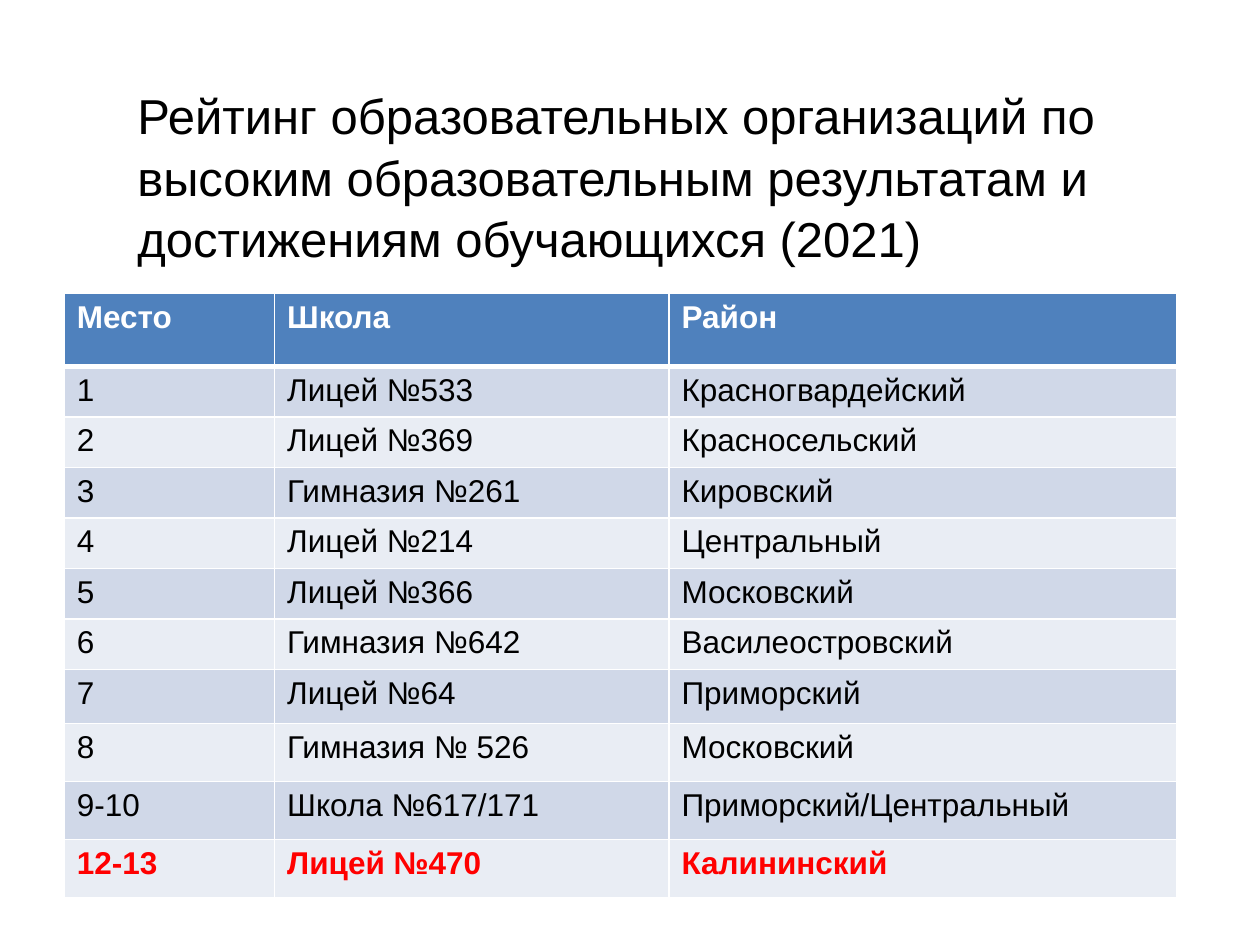
from lxml import etree
from pptx import Presentation
from pptx.dml.color import RGBColor
from pptx.enum.text import MSO_ANCHOR
from pptx.oxml.ns import qn
from pptx.util import Inches, Pt

MIDDLE = MSO_ANCHOR.MIDDLE
FONT = "Arial"
BLACK, WHITE, RED = "000000", "FFFFFF", "FF0000"
HEADER_FILL = "4F81BD"
BAND_FILLS = ("E9EDF4", "D0D8E8")

TITLE = ("Рейтинг образовательных организаций по высоким образовательным "
         "результатам и достижениям обучающихся (2021)")
COLUMN_WIDTHS = (1.67, 3.13, 4.03)
ROW_HEIGHTS = (0.58, 0.39, 0.4, 0.39, 0.39, 0.39, 0.39, 0.43, 0.46, 0.46, 0.46)
RATING = (
    ("Место", "Школа", "Район"),
    ("1", "Лицей №533", "Красногвардейский"),
    ("2", "Лицей №369", "Красносельский"),
    ("3", "Гимназия №261", "Кировский"),
    ("4", "Лицей №214", "Центральный"),
    ("5", "Лицей №366", "Московский"),
    ("6", "Гимназия №642", "Василеостровский"),
    ("7", "Лицей №64", "Приморский"),
    ("8", "Гимназия № 526", "Московский"),
    ("9-10", "Школа №617/171", "Приморский/Центральный"),
    ("12-13", "Лицей №470", "Калининский"),
)


def color(value):
    return RGBColor.from_string(value)


def set_font(paragraph, size, font_color, bold=False):
    font = paragraph.font
    font.name = FONT
    font.size = Pt(size)
    font.bold = bold
    font.color.rgb = color(font_color)


def add_title(slide):
    box = slide.shapes.add_textbox(Inches(1.09), Inches(0.68), Inches(7.82), Inches(1.42))
    frame = box.text_frame
    frame.word_wrap = True
    frame.vertical_anchor = MIDDLE
    frame.margin_left = frame.margin_right = frame.margin_top = frame.margin_bottom = 0
    paragraph = frame.paragraphs[0]
    paragraph.text = TITLE
    paragraph.line_spacing = 1.05
    set_font(paragraph, 28, BLACK)


def set_borders(cell, widths):
    """Draw white borders; widths maps a side tag to points."""
    properties = cell._tc.get_or_add_tcPr()
    for index, (side, width) in enumerate(widths.items()):
        line = etree.Element(qn(f"a:{side}"), w=str(Pt(width)))
        fill = etree.SubElement(line, qn("a:solidFill"))
        etree.SubElement(fill, qn("a:srgbClr"), val=WHITE)
        properties.insert(index, line)


def row_style(row):
    """Return fill, font colour and weight of a row."""
    if row == 0:
        return HEADER_FILL, WHITE, True
    if row == len(RATING) - 1:
        return BAND_FILLS[row % 2], RED, True
    return BAND_FILLS[row % 2], BLACK, False


def add_rating_table(slide):
    table = slide.shapes.add_table(
        len(RATING), len(COLUMN_WIDTHS), Inches(0.51), Inches(2.33),
        Inches(sum(COLUMN_WIDTHS)), Inches(sum(ROW_HEIGHTS))).table
    for column, width in zip(table.columns, COLUMN_WIDTHS):
        column.width = Inches(width)
    for row, (height, texts) in enumerate(zip(ROW_HEIGHTS, RATING)):
        table.rows[row].height = Inches(height)
        fill, font_color, bold = row_style(row)
        borders = {"lnL": 1, "lnR": 1,
                   "lnT": 3 if row == 1 else 1,
                   "lnB": 3 if row == 0 else 1}
        for column, text in enumerate(texts):
            cell = table.cell(row, column)
            cell.fill.solid()
            cell.fill.fore_color.rgb = color(fill)
            set_borders(cell, borders)
            paragraph = cell.text_frame.paragraphs[0]
            paragraph.text = text
            set_font(paragraph, 18, font_color, bold)


def main():
    presentation = Presentation()
    presentation.slide_width = Inches(10)
    presentation.slide_height = Inches(7.5)
    slide = presentation.slides.add_slide(presentation.slide_layouts[6])
    add_title(slide)
    add_rating_table(slide)
    presentation.save("out.pptx")


if __name__ == "__main__":
    main()
